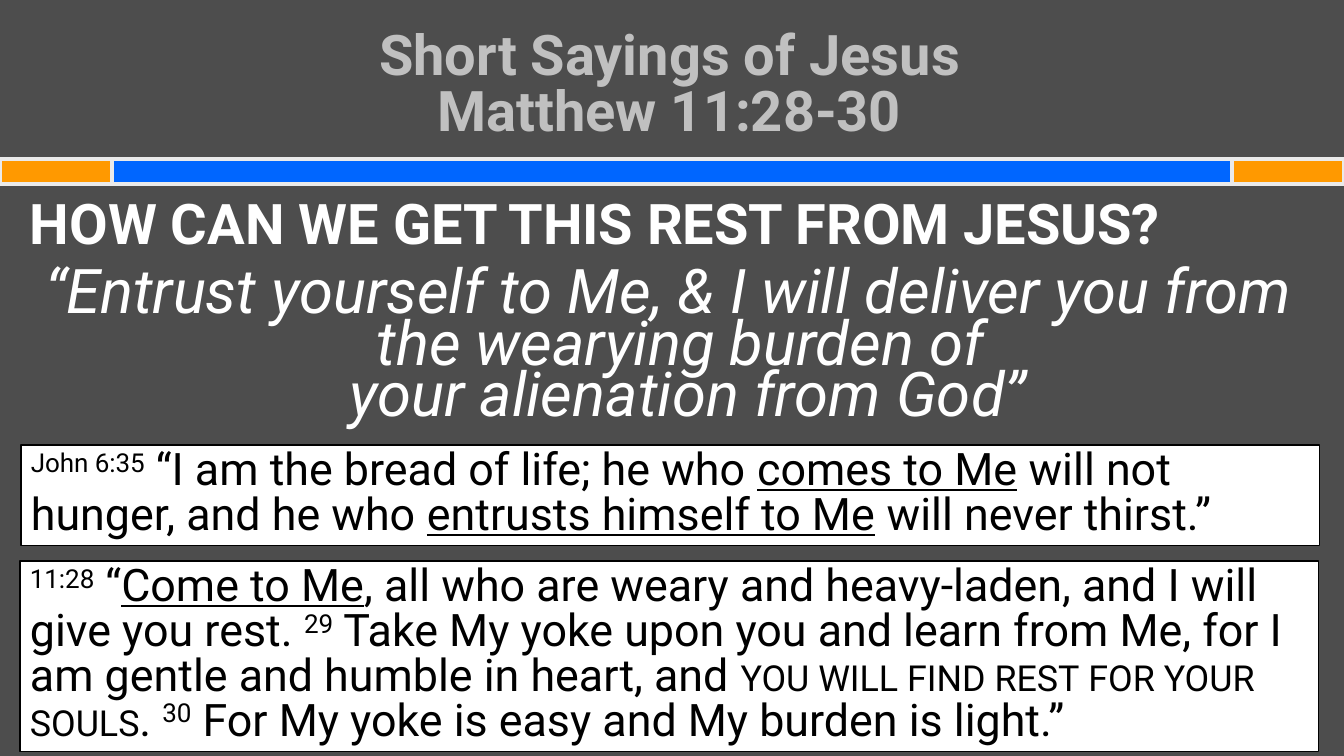
from pptx import Presentation
from pptx.dml.color import RGBColor
from pptx.enum.shapes import MSO_SHAPE
from pptx.enum.text import MSO_ANCHOR, MSO_AUTO_SIZE, PP_ALIGN
from pptx.util import Pt

RECTANGLE = MSO_SHAPE.RECTANGLE
LEFT, CENTER = PP_ALIGN.LEFT, PP_ALIGN.CENTER
MIDDLE, TOP = MSO_ANCHOR.MIDDLE, MSO_ANCHOR.TOP
FIXED, GROW = MSO_AUTO_SIZE.NONE, MSO_AUTO_SIZE.SHAPE_TO_FIT_TEXT

WIDTH, HEIGHT = 1344, 756
EMU_PER_PX = 12192000 / WIDTH
FONT = "Roboto"

DARK_GRAY = RGBColor(0x4D, 0x4D, 0x4D)
SILVER = RGBColor(0xC0, 0xC0, 0xC0)
PALE_GRAY = RGBColor(0xEA, 0xEA, 0xEA)
WHITE = RGBColor(0xFF, 0xFF, 0xFF)
BLACK = RGBColor(0x00, 0x00, 0x00)
BLUE = RGBColor(0x00, 0x66, 0xFF)
ORANGE = RGBColor(0xFF, 0x99, 0x00)

BAR_TOP, BAR_HEIGHT, BAR_END = 159, 25, 112
TEXT_LEFT, TEXT_WIDTH = 20, 1299

JOHN_VERSE = [
    ("John 6:35", "super"),
    (" “I am the bread of life; he who ", ""),
    ("comes to Me", "underline"),
    (" will not hunger, and he who ", ""),
    ("entrusts himself to Me", "underline"),
    (" will never thirst.”", ""),
]
MATTHEW_VERSES = [
    ("11:28", "super"),
    (" “", ""),
    ("Come to Me", "underline"),
    (", all who are weary and heavy-laden, and I will give you rest. ", ""),
    ("29", "super"),
    (" Take My yoke upon you and learn from Me, for I am gentle and humble in heart, and ", ""),
    ("you will find rest for your souls", "small caps"),
    (". ", ""),
    ("30", "super"),
    (" For My yoke is easy and My burden is light.”", ""),
]


def px(length):
    return round(length * EMU_PER_PX)


def box(left, top, width, height):
    return px(left), px(top), px(width), px(height)


def add_rectangle(slide, bounds, fill, line, line_width):
    shape = slide.shapes.add_shape(RECTANGLE, *box(*bounds))
    shape.shadow.inherit = False
    shape.fill.solid()
    shape.fill.fore_color.rgb = fill
    shape.line.color.rgb = line
    shape.line.width = Pt(line_width)
    return shape


def set_frame(frame, anchor, auto_size):
    frame.word_wrap = True
    frame.vertical_anchor = anchor
    frame.auto_size = auto_size


def add_run(paragraph, text, size, color, bold=False, italic=False, style=""):
    run = paragraph.add_run()
    run.text = text
    font = run.font
    font.name, font.size = FONT, Pt(size)
    font.bold, font.italic = bold, italic
    font.color.rgb = color
    if style == "underline":
        font.underline = True
    elif style == "super":
        run._r.get_or_add_rPr().set("baseline", "30000")
    elif style == "small caps":
        run._r.get_or_add_rPr().set("cap", "small")


def add_lines(paragraph, lines, size, color, **emphasis):
    """Adds one run per line, with line breaks between them."""
    for index, line in enumerate(lines):
        if index:
            paragraph.add_line_break()
        add_run(paragraph, line, size, color, **emphasis)


def set_title(slide):
    title = slide.shapes.title
    title.left, title.top, title.width, title.height = box(TEXT_LEFT, 30, TEXT_WIDTH, 113)
    set_frame(title.text_frame, MIDDLE, FIXED)
    paragraph = title.text_frame.paragraphs[0]
    paragraph.alignment = CENTER
    paragraph.line_spacing = Pt(40)
    add_lines(paragraph, ["Short Sayings of Jesus", "Matthew 11:28-30"], 40, SILVER, bold=True)


def set_hanging(paragraph, alignment):
    properties = paragraph._p.get_or_add_pPr()
    properties.set("marL", str(px(38)))
    properties.set("indent", str(-px(38)))
    paragraph.alignment = alignment
    paragraph.line_spacing = 0.7


def add_body(slide):
    frame = slide.shapes.add_textbox(*box(TEXT_LEFT, 202, TEXT_WIDTH, 537)).text_frame
    set_frame(frame, TOP, FIXED)
    question = frame.paragraphs[0]
    set_hanging(question, LEFT)
    add_run(question, "HOW CAN WE GET THIS REST FROM JESUS?", 40, WHITE, bold=True)
    answer = frame.add_paragraph()
    set_hanging(answer, CENTER)
    answer.space_before = Pt(13)
    add_lines(
        answer,
        [
            "“Entrust yourself to Me, & I will deliver you from the wearying burden of ",
            "your alienation from God”",
        ],
        44, WHITE, italic=True,
    )


def add_verse_box(slide, left, top, height, runs):
    shape = add_rectangle(slide, (left, top, TEXT_WIDTH, height), WHITE, BLACK, 0.75)
    set_frame(shape.text_frame, TOP, GROW)
    paragraph = shape.text_frame.paragraphs[0]
    paragraph.alignment = LEFT
    paragraph.line_spacing = Pt(32)
    for text, style in runs:
        add_run(paragraph, text, 32, BLACK, style=style)


def main():
    presentation = Presentation()
    presentation.slide_width, presentation.slide_height = px(WIDTH), px(HEIGHT)
    slide = presentation.slides.add_slide(presentation.slide_layouts[5])
    slide.background.fill.solid()
    slide.background.fill.fore_color.rgb = DARK_GRAY

    bars = [(0, WIDTH, BLUE), (0, BAR_END, ORANGE), (WIDTH - BAR_END, BAR_END, ORANGE)]
    for left, width, color in bars:
        add_rectangle(slide, (left, BAR_TOP, width, BAR_HEIGHT), color, PALE_GRAY, 3)

    set_title(slide)
    add_body(slide)
    add_verse_box(slide, TEXT_LEFT, 561, 191, MATTHEW_VERSES)
    add_verse_box(slide, TEXT_LEFT + 1, 445, 101, JOHN_VERSE)
    presentation.save("out.pptx")


if __name__ == "__main__":
    main()
